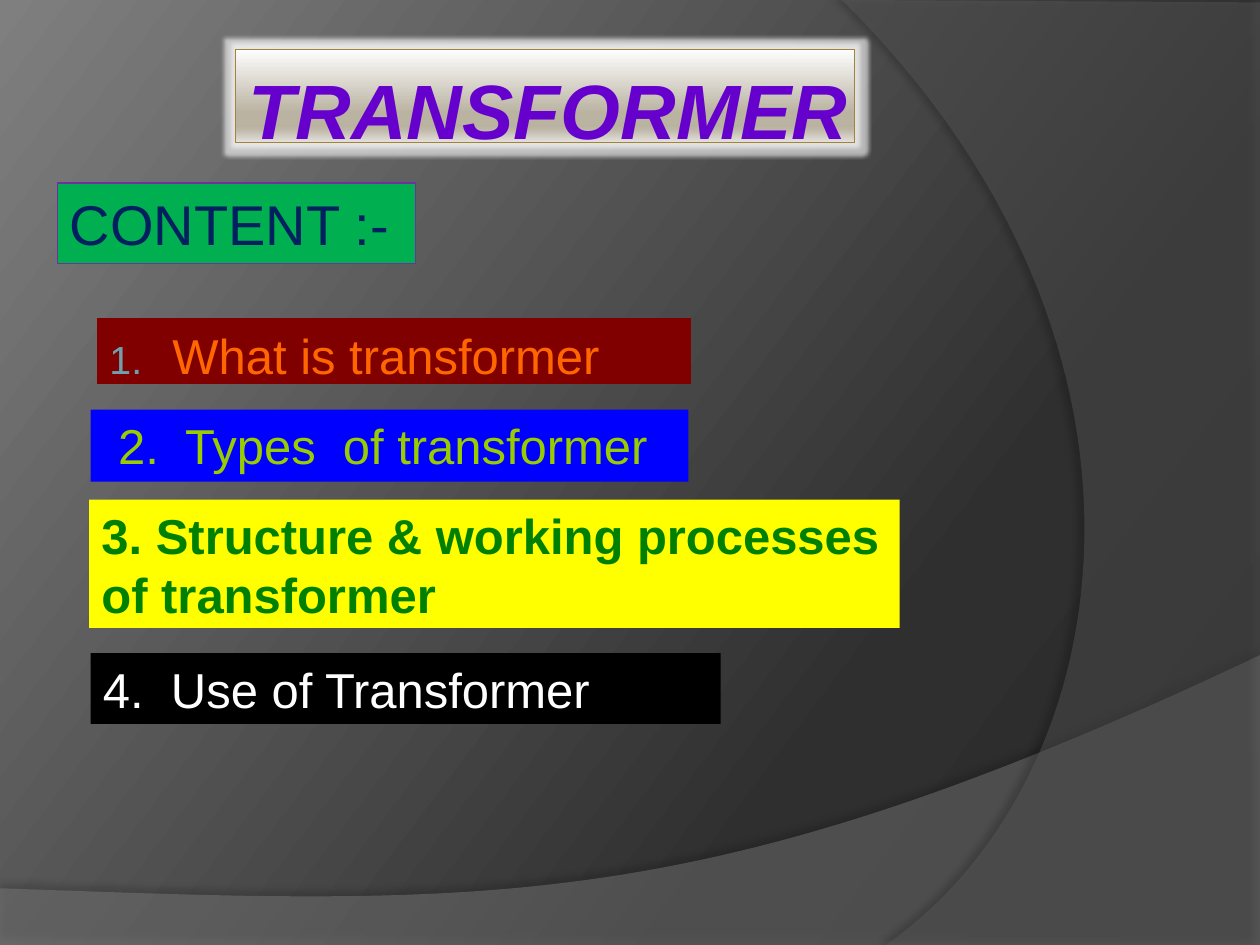
from lxml.etree import SubElement as Sub
from pptx import Presentation as Deck
from pptx.dml.color import RGBColor as RGB
from pptx.enum.shapes import MSO_SHAPE as Kind
from pptx.enum.text import MSO_ANCHOR as Anchor, PP_ALIGN as Align
from pptx.oxml.ns import qn
from pptx.util import Pt

BLACK, WHITE = RGB(0, 0, 0), RGB(255, 255, 255)
PURPLE, GOLD = RGB(0x66, 0, 0xCC), RGB(0xA1, 0x84, 0x3A)
MAROON, ORANGE, TEAL = RGB(0x80, 0, 0), RGB(0xFF, 0x66, 0), RGB(0x6E, 0xA0, 0xB0)
BLUE, LIME = RGB(0, 0, 0xFF), RGB(0x98, 0xCC, 0)
YELLOW, GREEN = RGB(0xFF, 0xFF, 0), RGB(0, 0x80, 0)
MINT, NAVY, VIOLET = RGB(0, 0xB0, 0x50), RGB(0, 0x20, 0x60), RGB(0x70, 0x30, 0xA0)
GREY, SLATE = RGB(0x7F, 0x7F, 0x7F), RGB(0x5E, 0x5E, 0x5E)
DUSK = [(0, RGB(0x28, 0x28, 0x28)), (30, RGB(0x2F, 0x2F, 0x2F)), (100, GREY)]
SILVER = [(0, RGB(0xFE, 0xFE, 0xFE)), (68, RGB(0xBA, 0xB3, 0xA2)),
          (81, RGB(0xB8, 0xB1, 0x9F)), (86, RGB(0xBF, 0xB8, 0xA9)),
          (100, RGB(0xE3, 0xE1, 0xDB))]


def apply(item, vals):
    for name, val in vals.items():
        setattr(item, name, val)


def tint(node, color, alpha=100):
    clr = Sub(node, qn("a:srgbClr"), val=str(color))
    if alpha < 100:
        Sub(clr, qn("a:alpha"), val=str(alpha * 1000))


def blend(fill, root, stops, angle):
    fill.gradient()
    fill.gradient_angle = 360 - angle
    ramp = next(root.iter(qn("a:gsLst")))
    for old in list(ramp):
        ramp.remove(old)
    for pos, color in stops:
        tint(Sub(ramp, qn("a:gs"), pos=str(pos * 1000)), color)


def effect(shape, kind, color, alpha, **vals):
    fx = Sub(shape.element.spPr, qn("a:effectLst"))
    tint(Sub(fx, qn("a:" + kind), **{k: str(v) for k, v in vals.items()}), color, alpha)


def bend(a, b, c, d, steps=60):
    for i in range(1, steps + 1):
        t = i / steps
        u = 1 - t
        yield tuple(u**3 * p + 3 * u * u * t * q + 3 * u * t * t * r + t**3 * s
                    for p, q, r, s in zip(a, b, c, d))


def add_wave(slide, edge, curve, color, alpha, shade, angle):
    pts = [(Pt(x), Pt(y)) for x, y in [*edge, *bend(edge[-1], *curve)]]
    pen = slide.shapes.build_freeform(*pts[0], scale=1.0)
    pen.add_line_segments(pts[1:], close=True)
    wave = pen.convert_to_shape()
    wave.line.fill.background()
    wave.fill.solid()
    wave.fill.fore_color.rgb = color
    clr = next(wave.element.spPr.iter(qn("a:srgbClr")), None)
    Sub(clr, qn("a:alpha"), val=str(alpha * 1000))
    effect(wave, "outerShdw", BLACK, shade, blurRad=Pt(4), dist=Pt(4),
           dir=angle * 60000, algn="ctr", rotWithShape="0")


def add_box(slide, at, text, ink, size=28, fill=None, line=None,
            font=None, frame=None, align=Align.LEFT):
    box = slide.shapes.add_shape(Kind.RECTANGLE, *map(Pt, at))
    if fill is not None:
        box.shadow.inherit = False
        box.fill.solid()
        box.fill.fore_color.rgb = fill
    if line is None:
        box.line.fill.background()
    else:
        box.line.color.rgb = line
        box.line.width = Pt(0.75)
    body = box.text_frame
    apply(body, {"word_wrap": True, "vertical_anchor": Anchor.TOP, **(frame or {})})
    para = body.paragraphs[0]
    para.alignment = align
    run = para.add_run()
    run.text = text
    apply(run.font, {"name": "Arial", "size": Pt(size), **(font or {})})
    run.font.color.rgb = ink
    return box


def number(box, color, indent):
    props = box.text_frame.paragraphs[0]._p.get_or_add_pPr()
    props.set("marL", str(Pt(indent)))
    props.set("indent", str(-Pt(indent)))
    tint(Sub(props, qn("a:buClr")), color)
    Sub(props, qn("a:buSzPct"), val="80000")
    Sub(props, qn("a:buFont"), typeface="+mj-lt")
    Sub(props, qn("a:buAutoNum"), type="arabicPeriod")


def add_title(slide):
    pad = {"margin_left": Pt(3.6), "margin_right": Pt(3.6),
           "margin_top": Pt(7.8), "margin_bottom": 0}
    box = add_box(slide, (134.64, 28.2, 353.5, 53.3), "TRANSFORMER ", PURPLE, 44,
                  line=GOLD, font={"bold": True, "italic": True},
                  frame=pad, align=Align.RIGHT)
    blend(box.fill, box.element, SILVER, 90)
    effect(box, "glow", WHITE, 60, rad=Pt(5))


def main():
    deck = Deck()
    apply(deck, {"slide_width": Pt(720), "slide_height": Pt(540)})
    slide = deck.slides.add_slide(deck.slide_layouts[6])
    blend(slide.background.fill, slide.element, DUSK, 217)

    add_wave(slide, [(0, 507.6), (0, 540), (720, 540), (720, 374.4)],
             [(402.5, 524.9), (281.5, 517.7), (0, 507.6)], GREY, 45, 35, 270)
    add_wave(slide, [(720, 1.4), (720, 540), (506.2, 540)],
             [(641.5, 445.7), (681.8, 198), (481, 0)], SLATE, 40, 45, 180)

    add_title(slide)
    first = add_box(slide, (55.5, 181.8, 339.3, 37.6), "What is transformer",
                    ORANGE, fill=MAROON,
                    frame={"vertical_anchor": Anchor.BOTTOM, "margin_top": 0,
                           "margin_right": Pt(3.6), "margin_bottom": 0})
    number(first, TEAL, 36)
    add_box(slide, (51.8, 234, 341.7, 41.2), "2.  Types  of transformer ",
            LIME, fill=BLUE, align=Align.CENTER)
    add_box(slide, (51.8, 373.2, 360, 40.4), "4.  Use of Transformer",
            WHITE, fill=BLACK)
    add_box(slide, (50.9, 285.6, 463.2, 73.2),
            "3. Structure & working processes of transformer",
            GREEN, fill=YELLOW, font={"bold": True})
    add_box(slide, (32.7, 104.6, 204.8, 46), "CONTENT :-", NAVY, 32,
            fill=MINT, line=VIOLET)
    deck.save("out.pptx")


if __name__ == "__main__":
    main()
